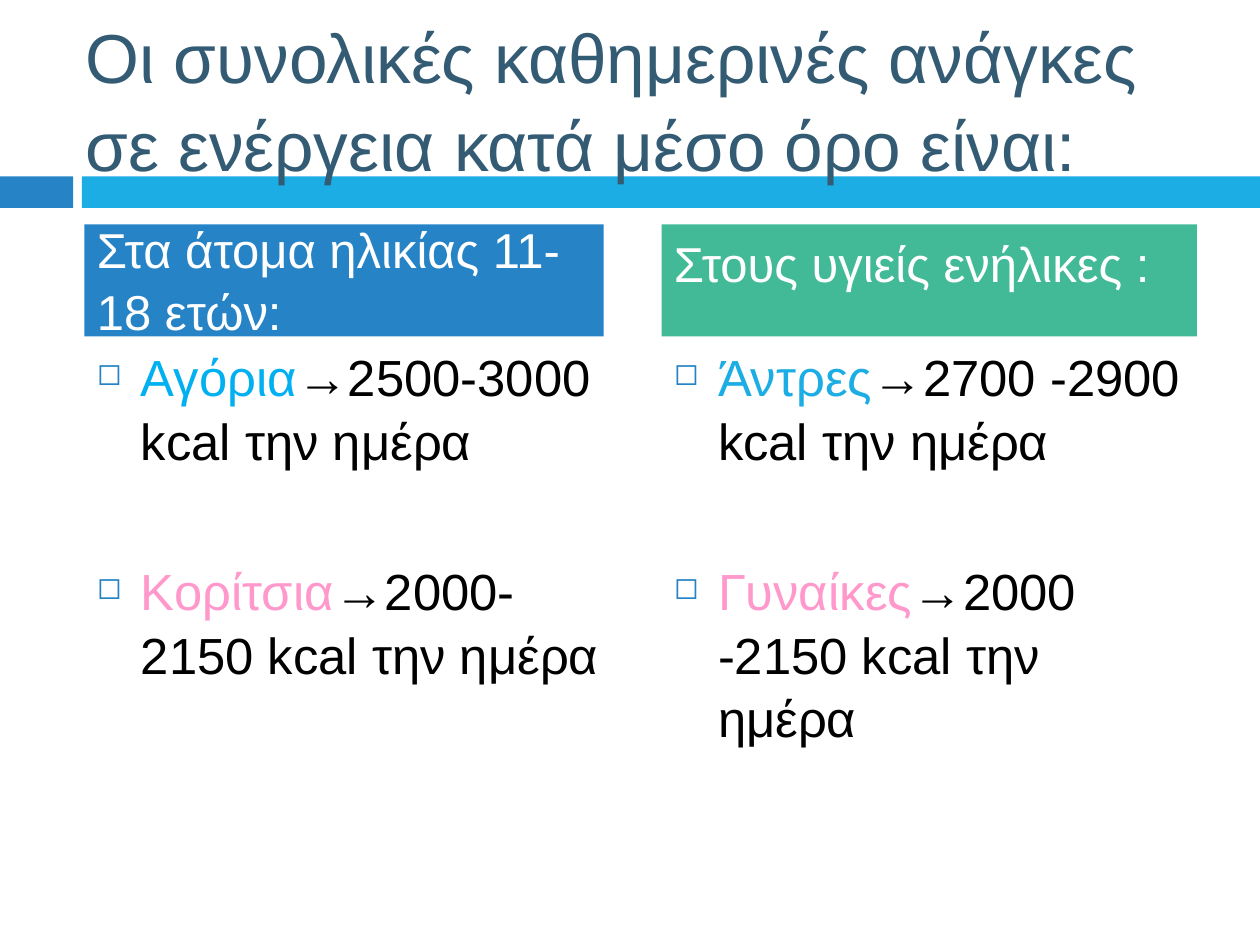
import pptx
import pptx.util
import pptx.dml.color
import pptx.enum.shapes
import pptx.enum.text
import lxml.etree
import pptx.oxml.ns

Inches, Pt = pptx.util.Inches, pptx.util.Pt
RGB = pptx.dml.color.RGBColor.from_string
ANCHOR = pptx.enum.text.MSO_ANCHOR

COLORS = {
    "blue": "2683C6", "cyan": "1CADE4", "green": "42BA97", "title": "335B74",
    "boys": "00B0F0", "pink": "FF99CC", "black": "000000", "white": "FFFFFF",
}
LINE_SPACING = 1.05
BULLET_INDENT = Inches(0.35)
# Room of one skipped line between the two entries
ENTRY_GAP = Pt(49)

deck = pptx.Presentation()
deck.slide_width, deck.slide_height = Inches(10), Inches(7.5)
slide = deck.slides.add_slide(deck.slide_layouts[6])


def add_bar(left, top, width, height, color):
    bar = slide.shapes.add_shape(
        pptx.enum.shapes.MSO_SHAPE.RECTANGLE,
        Inches(left), Inches(top), Inches(width), Inches(height))
    bar.shadow.inherit = False
    bar.fill.solid()
    bar.fill.fore_color.rgb = RGB(COLORS[color])
    bar.line.fill.background()
    return bar


def write_runs(paragraph, size, *pieces):
    """Add (text, color) pieces to a left-aligned paragraph."""
    paragraph.alignment = pptx.enum.text.PP_ALIGN.LEFT
    paragraph.line_spacing = LINE_SPACING
    for text, color in pieces:
        run = paragraph.add_run()
        run.text = text
        run.font.name = "Arial"
        run.font.size = Pt(size)
        run.font.color.rgb = RGB(COLORS[color])


# Band under the title
add_bar(0, 1.4, 0.58, 0.25, "blue")
add_bar(0.65, 1.4, 9.35, 0.25, "cyan")

title = slide.shapes.add_textbox(Inches(0.58), Inches(0.3), Inches(8.92), Inches(0.95))
title.text_frame.word_wrap = True
title.text_frame.vertical_anchor = ANCHOR.MIDDLE
write_runs(title.text_frame.paragraphs[0], 39.6,
           ("Οι συνολικές καθημερινές ανάγκες σε ενέργεια κατά μέσο όρο είναι:", "title"))

# left, heading width, heading colour, heading bottom inset, heading, entries
groups = [
    (0.67, 4.12, "blue", 0.08, "Στα άτομα ηλικίας 11-18 ετών:", [
        ("Αγόρια", "boys", "→2500-3000 kcal την ημέρα"),
        ("Κορίτσια", "pink", "→2000-2150 kcal την ημέρα")]),
    (5.25, 4.25, "green", 0.35, "Στους υγιείς ενήλικες :", [
        ("Άντρες", "cyan", "→2700 -2900 kcal την ημέρα"),
        ("Γυναίκες", "pink", "→2000 -2150 kcal την ημέρα")]),
]
for left, heading_width, color, bottom_inset, heading, entries in groups:
    needs = slide.shapes.add_textbox(Inches(left), Inches(2.67), Inches(4.25), Inches(3.92))
    needs.text_frame.word_wrap = True
    for index, (people, people_color, energy) in enumerate(entries):
        entry = (needs.text_frame.add_paragraph() if index
                 else needs.text_frame.paragraphs[0])
        write_runs(entry, 29, (people, people_color), (energy, "black"))
        entry.space_before = ENTRY_GAP if index else Pt(0)
        props = entry._p.get_or_add_pPr()
        props.set("marL", str(BULLET_INDENT))
        props.set("indent", str(-BULLET_INDENT))
        qn = pptx.oxml.ns.qn
        bullet_color = lxml.etree.SubElement(props, qn("a:buClr"))
        lxml.etree.SubElement(bullet_color, qn("a:srgbClr"), val=COLORS["blue"])
        lxml.etree.SubElement(props, qn("a:buSzPct"), val="60000")
        lxml.etree.SubElement(props, qn("a:buChar"), char="◻")

    header = add_bar(left, 1.78, heading_width, 0.89, color)
    header.text_frame.word_wrap = True
    header.text_frame.vertical_anchor = ANCHOR.MIDDLE
    header.text_frame.margin_bottom = Inches(bottom_inset)
    write_runs(header.text_frame.paragraphs[0], 28, (heading, "white"))

deck.save("out.pptx")
